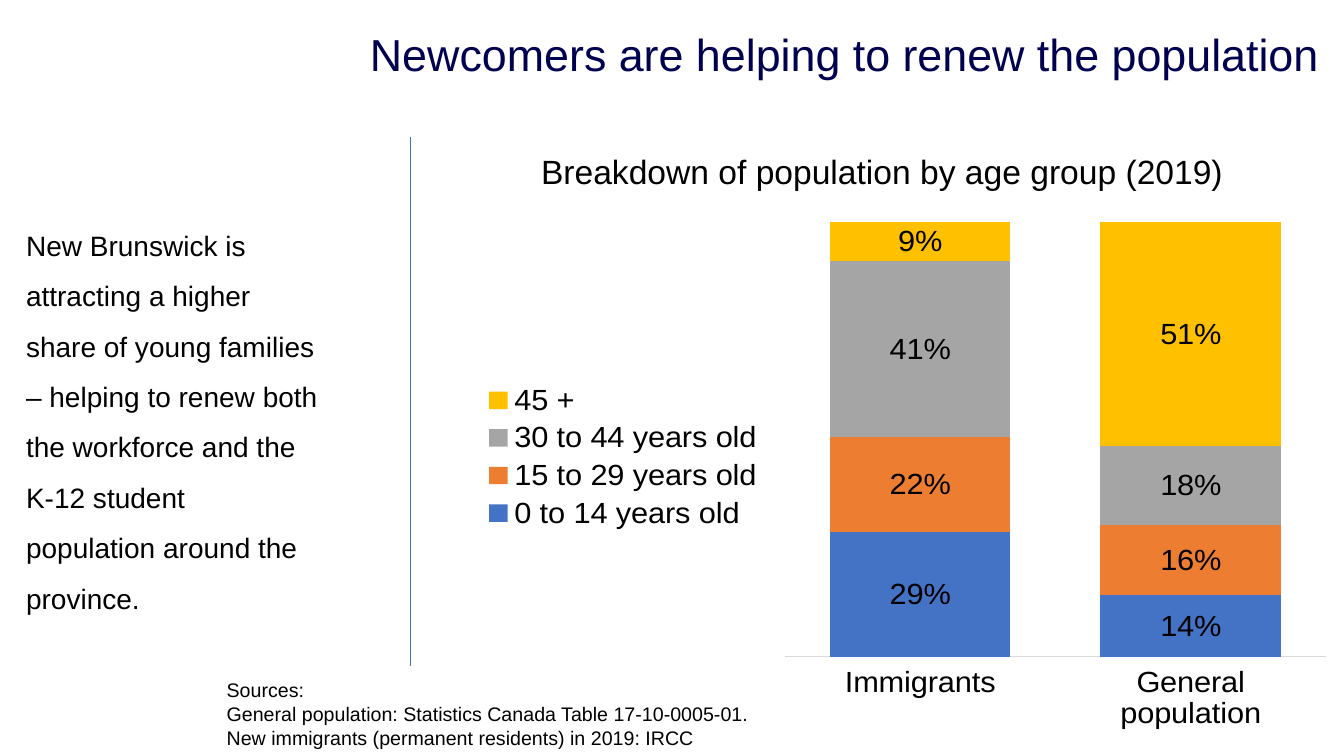
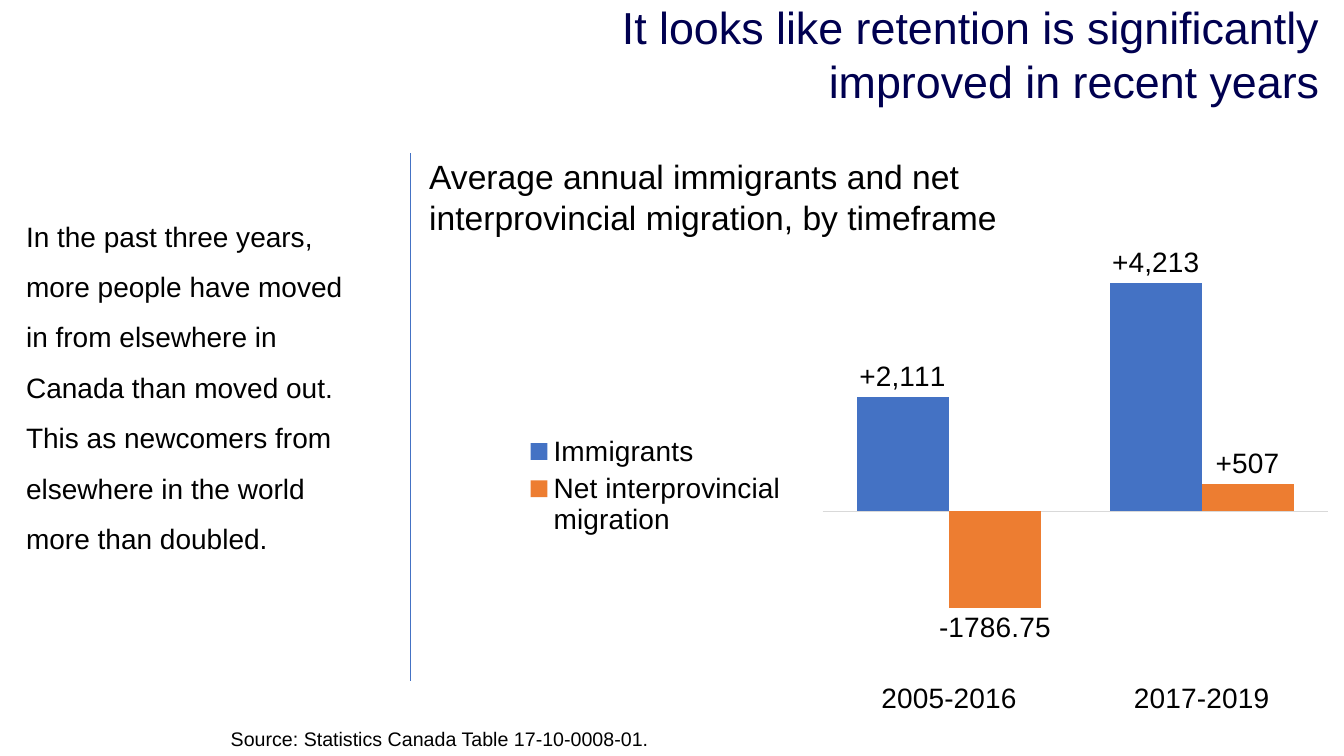
from lxml.etree import SubElement
from pptx import Presentation
from pptx.chart.data import CategoryChartData
from pptx.dml.color import RGBColor
from pptx.enum.chart import XL_CHART_TYPE, XL_LABEL_POSITION, XL_LEGEND_POSITION
from pptx.enum.chart import XL_TICK_LABEL_POSITION, XL_TICK_MARK
from pptx.enum.shapes import MSO_CONNECTOR
from pptx.enum.text import MSO_ANCHOR, MSO_AUTO_SIZE, PP_ALIGN
from pptx.oxml.ns import qn
from pptx.util import Pt

HUES = {"title": "000050", "text": "000000", "axis": "D9D9D9", "blue": "4472C4",
        "orange": "ED7D31", "gray": "A5A5A5", "gold": "FFC000"}
FACE = "Arial"
RULE_X = 293

PAGES = [
    {"title": ("Newcomers are helping to renew the population", (222, 6.5, 728, 64)),
     "body": ("New Brunswick is attracting a higher share of young families – helping "
              "to renew both the workforce and the K-12 student population around the "
              "province.", (11.5, 147.6, 222.5, 294)),
     "head": ("Breakdown of population by age group (2019)", (379.4, 104.4, 507, 36)),
     "wrap": False,
     "source": ("Sources:\nGeneral population: Statistics Canada Table 17-10-0005-01.\n"
                "New immigrants (permanent residents) in 2019: IRCC",
                (154.8, 481, 389, 58)),
     "rule": (98, 476),
     "chart": {"kind": XL_CHART_TYPE.COLUMN_STACKED_100, "box": (336.2, 151.9, 623.5, 369.4),
               "size": 22, "gap": 50, "lap": 100, "span": (0, 1),
               "spot": XL_LABEL_POSITION.CENTER, "plot": (0.36, 0.02, 0.62, 0.89),
               "cats": ["Immigrants", "General population"],
               "rows": [("0 to 14 years old", (0.29, 0.14), "blue", "0%"),
                        ("15 to 29 years old", (0.22, 0.16), "orange", "0%"),
                        ("30 to 44 years old", (0.41, 0.18), "gray", "0%"),
                        ("45 +", (0.09, 0.51), "gold", "0%")]}},
    {"title": ("It looks like retention is significantly improved in recent years",
               (327, 6.5, 623, 64)),
     "body": ("In the past three years, more people have moved in from elsewhere in "
              "Canada than moved out. This as newcomers from elsewhere in the world "
              "more than doubled.", (11.5, 141, 251.3, 257)),
     "head": ("Average annual immigrants and net interprovincial migration, by timeframe",
              (299.5, 108, 427, 65.5)),
     "wrap": True,
     "source": ("Source: Statistics Canada Table 17-10-0008-01.", (157.7, 515.5, 314, 24.5)),
     "rule": (109.4, 486.7),
     "chart": {"kind": XL_CHART_TYPE.COLUMN_CLUSTERED, "box": (366.5, 160.6, 582.5, 373),
               "size": 20, "gap": 75, "lap": 0, "span": (-3000, 5000),
               "spot": XL_LABEL_POSITION.OUTSIDE_END, "plot": (0.38, 0.03, 0.62, 0.83),
               "cats": ["2005-2016", "2017-2019"],
               "rows": [("Immigrants", (2111, 4213), "blue", "+#,##0"),
                        ("Net interprovincial migration", (-1786.75, 507), "orange",
                         "+General;-General")]}},
]


def hue(name):
    return RGBColor.from_string(HUES[name])


def style(font, size, color="text"):
    font.name, font.size, font.bold = FACE, Pt(size), False
    font.color.rgb = hue(color)


def write(slide, text, box, size=20, color="text", align=PP_ALIGN.LEFT,
          space=None, wrap=True, anchor=MSO_ANCHOR.TOP, shape=None):
    spot = [Pt(v) for v in box]
    shape = shape or slide.shapes.add_textbox(*spot)
    shape.left, shape.top, shape.width, shape.height = spot
    frame = shape.text_frame
    frame.text = text
    frame.word_wrap = wrap
    frame.auto_size = MSO_AUTO_SIZE.NONE
    frame.vertical_anchor = anchor
    for par in frame.paragraphs:
        par.alignment = align
        if space:
            par.line_spacing = space
        for run in par.runs:
            style(run.font, size, color)


def draw_rule(slide, top, end):
    line = slide.shapes.add_connector(MSO_CONNECTOR.STRAIGHT, Pt(RULE_X), Pt(top),
                                      Pt(RULE_X), Pt(end))
    line.line.color.rgb = hue("blue")
    line.line.width = Pt(0.5)
    SubElement(line._element.spPr, qn("a:effectLst"))


def place_plot(chart, plot):
    area = chart._chartSpace.chart.plotArea
    for old in area.findall(qn("c:layout")):
        area.remove(old)
    outer = SubElement(area, qn("c:layout"))
    area.insert(0, outer)
    man = SubElement(outer, qn("c:manualLayout"))
    pairs = [("layoutTarget", "inner"), ("xMode", "edge"), ("yMode", "edge"),
             *zip("xywh", plot)]
    for tag, val in pairs:
        SubElement(man, qn("c:" + tag)).set("val", str(val))


def draw_chart(slide, kind, box, size, gap, lap, span, spot, plot, cats, rows):
    data = CategoryChartData()
    data.categories = cats
    for name, vals, _, form in rows:
        data.add_series(name, vals, form)
    chart = slide.shapes.add_chart(kind, *[Pt(v) for v in box], data).chart
    chart.has_title = False
    style(chart.font, size)
    chart.has_legend = True
    chart.legend.position = XL_LEGEND_POSITION.LEFT
    chart.legend.include_in_layout = False
    style(chart.legend.font, size)

    axis = chart.category_axis
    axis.major_tick_mark = axis.minor_tick_mark = XL_TICK_MARK.NONE
    axis.tick_label_position = XL_TICK_LABEL_POSITION.LOW
    axis.format.line.color.rgb = hue("axis")
    axis.format.line.width = Pt(0.75)
    style(axis.tick_labels.font, size)
    scale = chart.value_axis
    scale.visible = scale.has_major_gridlines = False
    scale.minimum_scale, scale.maximum_scale = span

    bars = chart.plots[0]
    bars.gap_width, bars.overlap = gap, lap
    bars.vary_by_categories = False
    for part, (_, _, color, form) in zip(bars.series, rows):
        part.invert_if_negative = False
        part.format.fill.solid()
        part.format.fill.fore_color.rgb = hue(color)
        tags = part.data_labels
        tags.show_value = True
        tags.number_format, tags.number_format_is_linked = form, False
        tags.position = spot
        style(tags.font, size)
    place_plot(chart, plot)


def main():
    deck = Presentation()
    deck.slide_width, deck.slide_height = Pt(960), Pt(540)
    for page in PAGES:
        slide = deck.slides.add_slide(deck.slide_layouts[5])
        write(slide, *page["title"], size=32, color="title", align=PP_ALIGN.RIGHT,
              anchor=MSO_ANCHOR.MIDDLE, shape=slide.shapes.title)
        draw_chart(slide, **page["chart"])
        write(slide, *page["head"], size=24, wrap=page["wrap"])
        write(slide, *page["source"], size=14, wrap=False)
        write(slide, *page["body"], space=1.5)
        draw_rule(slide, *page["rule"])
    deck.save("out.pptx")


if __name__ == "__main__":
    main()
